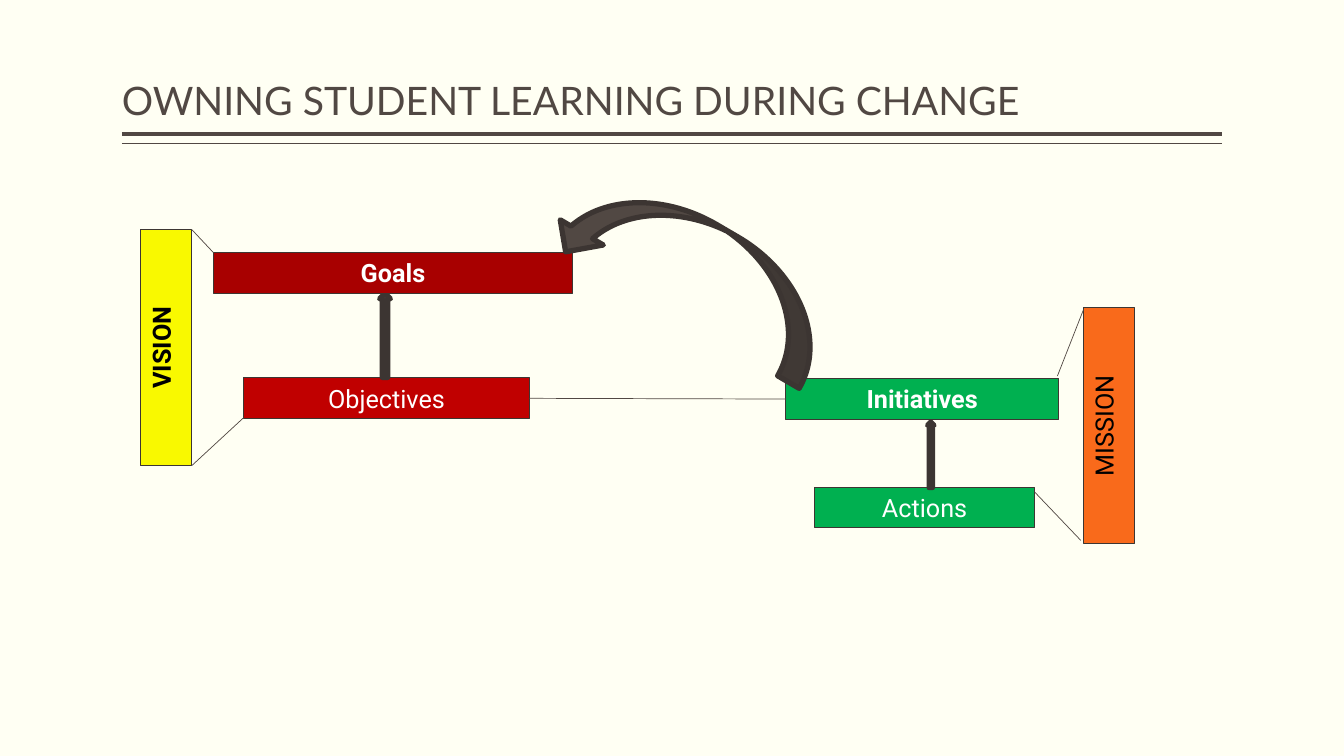
from dataclasses import dataclass

from lxml.etree import SubElement
from pptx import Presentation
from pptx.dml.color import RGBColor
from pptx.enum.shapes import MSO_CONNECTOR, MSO_SHAPE
from pptx.enum.text import MSO_ANCHOR, MSO_AUTO_SIZE, PP_ALIGN
from pptx.oxml.ns import qn
from pptx.shapes.autoshape import Shape
from pptx.shapes.connector import Connector
from pptx.slide import Slide
from pptx.util import Pt

COLOURS = {
    "background": "FFFFF3",
    "brown": "514843",
    "box_edge": "3D3632",
    "arrow_edge": "3C3532",
    "red": "C00000",
    "dark_red": "A80000",
    "green": "00B050",
    "yellow": "F9F900",
    "orange": "F96A1B",
    "white": "FFFFFF",
    "black": "000000",
}
BAR_HEIGHT = 29.08
PILLAR_WIDTH, PILLAR_HEIGHT = 36.5, 168.6


@dataclass(frozen=True)
class Box:
    label: str
    left: float
    top: float
    width: float
    fill: str
    bold: bool = False
    height: float = BAR_HEIGHT
    text: str = "white"
    upright: bool = False


@dataclass(frozen=True)
class Arrow:
    preset: MSO_SHAPE
    left: float
    top: float
    width: float
    height: float
    rotation: float = 0


@dataclass(frozen=True)
class Line:
    x1: float
    y1: float
    x2: float
    y2: float
    weight: float = 0.5


RULES = [
    Line(87.1, 95.8, 873.1, 95.8, 3),
    Line(87.1, 102.6, 873.1, 102.6, 1),
]
OBJECTIVES = Box("Objectives", 174, 270, 204.2, "red")
INITIATIVES = Box("Initiatives", 561.3, 270.5, 194.9, "green", bold=True)
# Boxes and arrows from back to front
PARTS = [
    OBJECTIVES,
    Arrow(MSO_SHAPE.UP_ARROW, 271.2, 209.6, 7.7, 60),
    Box("Goals", 152.5, 180.5, 256.4, "dark_red", bold=True),
    INITIATIVES,
    Box("Actions", 582, 348, 156.9, "green"),
    Arrow(MSO_SHAPE.UP_ARROW, 662.6, 301.5, 4.6, 46.8),
    Arrow(MSO_SHAPE.CURVED_UP_ARROW, 392.2, 157.7, 211, 71.3, 210.3),
    Box("VISION", 100.5, 164, PILLAR_WIDTH, "yellow", True, PILLAR_HEIGHT, "black", True),
    Box("MISSION", 774, 219.7, PILLAR_WIDTH, "orange", False, PILLAR_HEIGHT, "black", True),
]
BRACES = [
    Line(137, 164, 152.5, 180.5),
    Line(137, 332.6, 174, 298.4),
    Line(774, 221, 755.3, 268.6),
    Line(772, 386, 739, 351.4),
]


def colour(name: str) -> RGBColor:
    return RGBColor.from_string(COLOURS[name])


def add_shape(page: Slide, preset: MSO_SHAPE, item: Box | Arrow,
              fill: str, edge: str, weight: float) -> Shape:
    shape = page.shapes.add_shape(
        preset, Pt(item.left), Pt(item.top), Pt(item.width), Pt(item.height))
    shape.shadow.inherit = False
    shape.fill.solid()
    shape.fill.fore_color.rgb = colour(fill)
    shape.line.color.rgb = colour(edge)
    shape.line.width = Pt(weight)
    return shape


def add_box(page: Slide, box: Box) -> Shape:
    shape = add_shape(page, MSO_SHAPE.RECTANGLE, box, box.fill, "box_edge", 0.75)
    frame = shape.text_frame
    frame.word_wrap = True
    frame.auto_size = MSO_AUTO_SIZE.SHAPE_TO_FIT_TEXT
    frame.vertical_anchor = MSO_ANCHOR.TOP
    if box.upright:
        shape.element.txBody.bodyPr.set("vert", "vert270")
    para = frame.paragraphs[0]
    para.text = box.label
    para.alignment = PP_ALIGN.CENTER
    para.font.name = "Roboto"
    para.font.size = Pt(18)
    para.font.bold = box.bold
    para.font.color.rgb = colour(box.text)
    return shape


def add_arrow(page: Slide, arrow: Arrow) -> Shape:
    shape = add_shape(page, arrow.preset, arrow, "brown", "arrow_edge", 3.78)
    shape.rotation = arrow.rotation
    return shape


def add_line(page: Slide, line: Line) -> Connector:
    connector = page.shapes.add_connector(
        MSO_CONNECTOR.STRAIGHT, Pt(line.x1), Pt(line.y1), Pt(line.x2), Pt(line.y2))
    connector.line.color.rgb = colour("brown")
    connector.line.width = Pt(line.weight)
    SubElement(connector.element.spPr, qn("a:effectLst"))
    return connector


def set_title(page: Slide, text: str) -> None:
    title = page.shapes.title
    title.left, title.top = Pt(87.1), Pt(5.8)
    title.width, title.height = Pt(785.5), Pt(86.4)
    frame = title.text_frame
    frame.word_wrap = True
    frame.vertical_anchor = MSO_ANCHOR.BOTTOM
    frame.margin_left = frame.margin_right = 0
    frame.margin_top = frame.margin_bottom = Pt(3.6)
    para = frame.paragraphs[0]
    para.text = text
    para.alignment = PP_ALIGN.LEFT
    para.line_spacing = 0.9
    para.font.name = "Lato"
    para.font.size = Pt(28)
    para.font.color.rgb = colour("brown")


def main() -> None:
    deck = Presentation()
    deck.slide_width, deck.slide_height = Pt(960), Pt(540)
    page = deck.slides.add_slide(deck.slide_layouts.get_by_name("Title Only"))
    page.background.fill.solid()
    page.background.fill.fore_color.rgb = colour("background")

    # Title with its double rule
    set_title(page, "OWNING STUDENT LEARNING DURING CHANGE")
    for rule in RULES:
        add_line(page, rule)

    # Labelled boxes and the arrows between them
    shapes = {
        part: add_box(page, part) if isinstance(part, Box) else add_arrow(page, part)
        for part in PARTS
    }

    # Link from objectives to initiatives
    middle = BAR_HEIGHT / 2
    link = add_line(page, Line(OBJECTIVES.left + OBJECTIVES.width, OBJECTIVES.top + middle,
                               INITIATIVES.left, INITIATIVES.top + middle))
    link.begin_connect(shapes[OBJECTIVES], 3)
    link.end_connect(shapes[INITIATIVES], 1)

    # Lines that tie the boxes to vision and mission
    for brace in BRACES:
        add_line(page, brace)

    deck.save("out.pptx")


if __name__ == "__main__":
    main()
